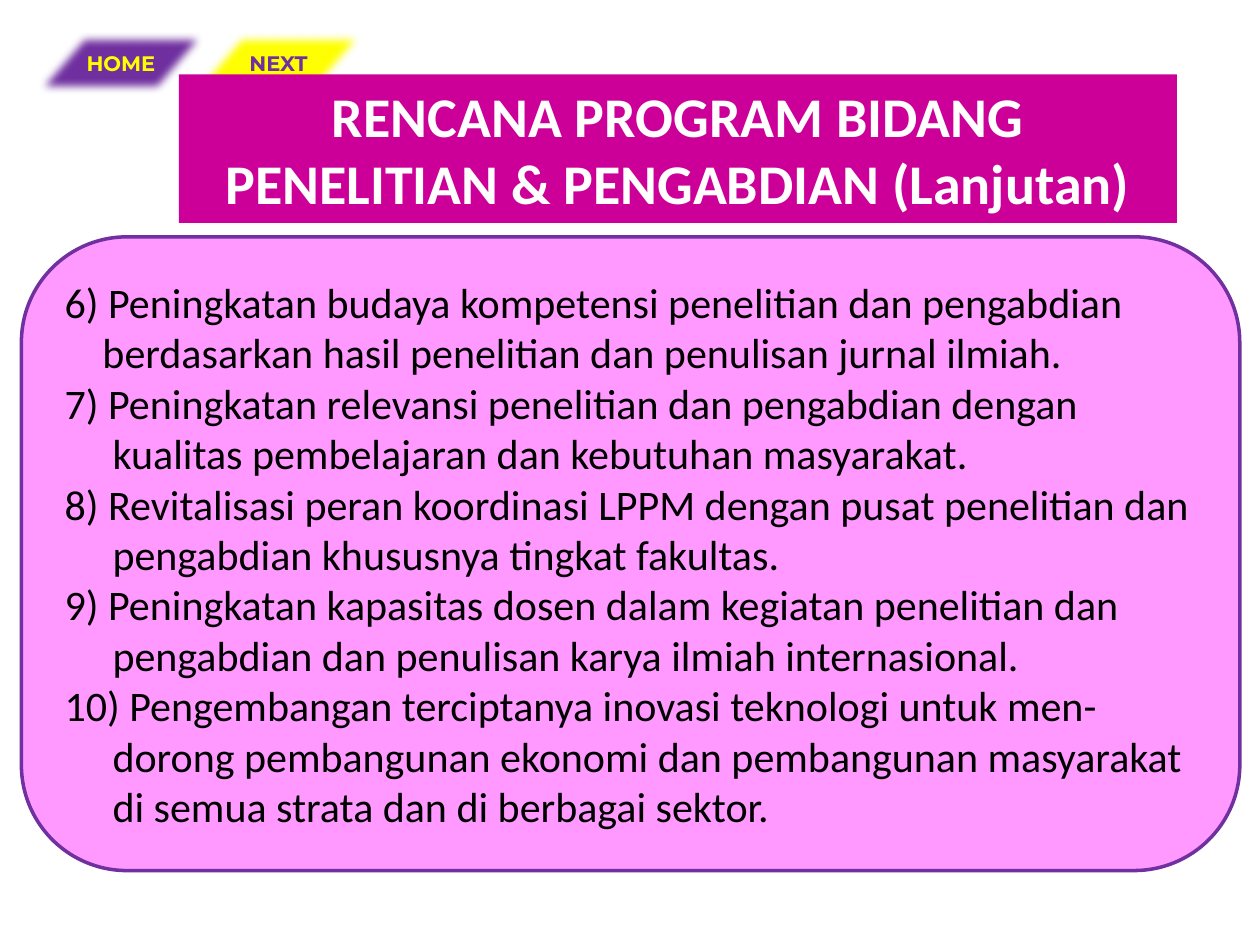
from lxml import etree
from pptx import Presentation
from pptx.dml.color import RGBColor
from pptx.enum.shapes import MSO_SHAPE
from pptx.enum.text import MSO_ANCHOR, PP_ALIGN
from pptx.oxml.ns import qn
from pptx.util import Inches, Pt

PARALLELOGRAM = MSO_SHAPE.PARALLELOGRAM
RECTANGLE = MSO_SHAPE.RECTANGLE
ROUNDED = MSO_SHAPE.ROUNDED_RECTANGLE
LEFT, CENTER = PP_ALIGN.LEFT, PP_ALIGN.CENTER
MIDDLE = MSO_ANCHOR.MIDDLE

PURPLE, YELLOW = "7030A0", "FFFF00"
MAGENTA, PINK = "CC0099", "FF99FF"
WHITE, BLACK = "FFFFFF", "000000"


def rgb(value):
    return RGBColor.from_string(value)


def write(p, text, size=24, color=BLACK, font="Calibri", bold=False,
          align=LEFT, indent=0):
    p.alignment = align
    if indent:
        p._p.get_or_add_pPr().set("marL", str(Inches(indent)))
    r = p.add_run()
    r.text = text
    r.font.size = Pt(size)
    r.font.name = font
    r.font.bold = bold
    r.font.color.rgb = rgb(color)


class SlideBuilder:
    def __init__(self, slide):
        self.s = slide

    def shape(self, kind, x, y, w, h, fill, line=None):
        sp = self.s.shapes.add_shape(
            kind, Inches(x), Inches(y), Inches(w), Inches(h))
        sp.shadow.inherit = False
        sp.fill.solid()
        sp.fill.fore_color.rgb = rgb(fill)
        if line:
            sp.line.color.rgb = rgb(line)
            sp.line.width = Pt(2)
        else:
            sp.line.fill.background()
        sp.text_frame.word_wrap = True
        sp.text_frame.vertical_anchor = MIDDLE
        return sp

    def button(self, x, text, fill, color):
        sp = self.shape(PARALLELOGRAM, x, 0.25, 1.58, 0.5, fill)
        sp.adjustments[0] = 0.87
        effects = sp._element.spPr.find(qn("a:effectLst"))
        etree.SubElement(effects, qn("a:softEdge"), rad=str(Pt(5)))
        tf = sp.text_frame
        tf.word_wrap = False
        write(tf.paragraphs[0], text, size=12, color=color,
              font="Montserrat", bold=True, align=CENTER)

    def title(self, text):
        sp = self.shape(RECTANGLE, 1.42, 0.59, 7.92, 1.18, MAGENTA)
        write(sp.text_frame.paragraphs[0], text, size=32, color=WHITE,
              bold=True, align=CENTER)

    def panel(self, lines):
        sp = self.shape(ROUNDED, 0.17, 1.88, 9.67, 5.03, PINK, line=PURPLE)
        tf = sp.text_frame
        for i, (indent, text) in enumerate(lines):
            p = tf.add_paragraph() if i else tf.paragraphs[0]
            write(p, text, indent=indent)


prs = Presentation()
prs.slide_width, prs.slide_height = Inches(10), Inches(7.5)
slide = SlideBuilder(prs.slides.add_slide(prs.slide_layouts[6]))

# Navigation buttons
slide.button(0.17, "HOME", PURPLE, YELLOW)
slide.button(1.42, "NEXT", YELLOW, PURPLE)

# Title
slide.title("RENCANA PROGRAM BIDANG PENELITIAN & PENGABDIAN (Lanjutan)")

# Programme list: indent in inches, then the line
slide.panel([
    (0, "6) Peningkatan budaya kompetensi penelitian dan pengabdian"),
    (0.3, "berdasarkan hasil penelitian dan penulisan jurnal ilmiah."),
    (0, "7) Peningkatan relevansi penelitian dan pengabdian dengan"),
    (0.38, "kualitas pembelajaran dan kebutuhan masyarakat."),
    (0, "8) Revitalisasi peran koordinasi LPPM dengan pusat penelitian dan"),
    (0.38, "pengabdian khususnya tingkat fakultas."),
    (0, "9) Peningkatan kapasitas dosen dalam kegiatan penelitian dan"),
    (0.38, "pengabdian dan penulisan karya ilmiah internasional."),
    (0, "10) Pengembangan terciptanya inovasi teknologi untuk men-"),
    (0.38, "dorong pembangunan ekonomi dan pembangunan masyarakat"),
    (0.38, "di semua strata dan di berbagai sektor."),
])

prs.save("out.pptx")
